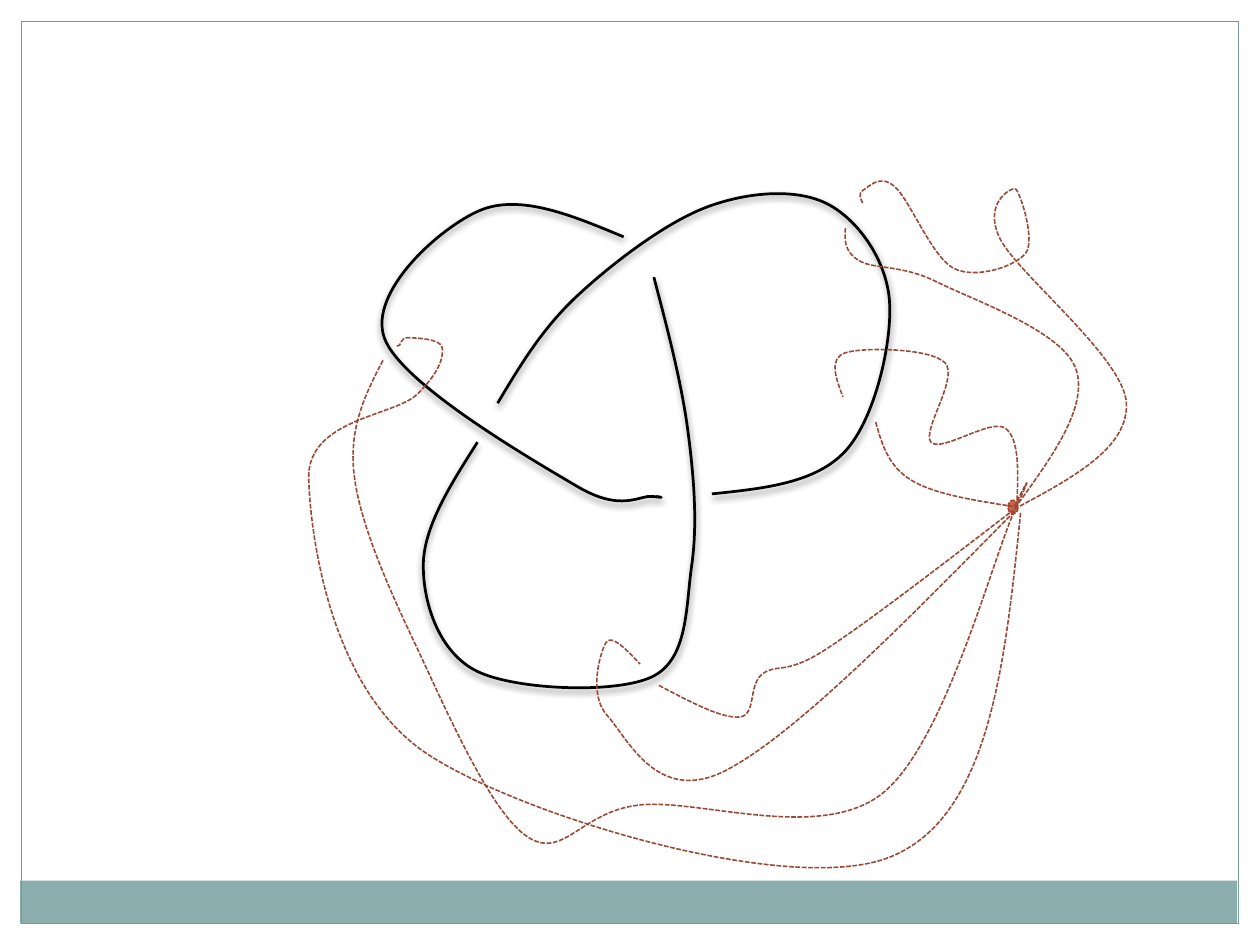
"""Builds a slide of a trefoil knot with dashed loops tied to a base point."""
from lxml import etree
from pptx import Presentation
from pptx.dml.color import RGBColor
from pptx.enum.dml import MSO_LINE
from pptx.enum.shapes import MSO_SHAPE as SHAPE
from pptx.oxml.ns import qn
from pptx.util import Inches, Pt

HUES = {"white": "FFFFFF", "band": "8CADAE", "frame": "7C999A",
        "knot": "000000", "loop": "9B4936", "dot": "D16349"}


def paint(shape, fill=None, line=None, width=0.75, dash=None):
    """Set fill and line, and drop the shadow."""
    shape.shadow.inherit = False
    if fill:
        shape.fill.solid()
        shape.fill.fore_color.rgb = RGBColor.from_string(HUES[fill])
    else:
        shape.fill.background()
    if line:
        shape.line.color.rgb = RGBColor.from_string(HUES[line])
        shape.line.width = Pt(width)
        shape.line.dash_style = dash
    else:
        shape.line.fill.background()


def curve(shapes, knots):
    """Draw one smooth open curve through the knots."""
    pts = [(Inches(x), Inches(y)) for x, y in knots]
    slopes = [tuple((b - a) / 6 for a, b in zip(p, q))
              for p, q in zip(pts, pts[2:])]
    outs = [None] + [(x + u, y + v) for (x, y), (u, v) in zip(pts[1:], slopes)]
    ins = [(x - u, y - v) for (x, y), (u, v) in zip(pts[1:], slopes)] + [None]
    outs[0] = tuple((a + b) / 2 for a, b in zip(pts[0], ins[0]))
    ins[-1] = tuple((a + b) / 2 for a, b in zip(pts[-1], outs[-1]))
    parts = list(zip(pts, outs, ins, pts[1:]))

    build = shapes.build_freeform(*pts[0])
    for part in parts:
        build.add_line_segments([(round(x), round(y)) for x, y in part[1:]], close=False)
    shape = build.convert_to_shape()

    spots = [[(1 - t) ** 3 * a + 3 * t * (1 - t) ** 2 * b
              + 3 * t * t * (1 - t) * c + t ** 3 * d
              for a, b, c, d in zip(*part)]
             for part in parts for t in [n / 40 for n in range(41)]]
    xs, ys = zip(*spots)
    left, top = round(min(xs)), round(min(ys))
    wide, high = round(max(xs)) - left, round(max(ys)) - top

    track = next(shape._element.iter(qn("a:path")))
    for pt in track.iter(qn("a:pt")):
        pt.set("x", str(int(pt.get("x")) + shape.left - left))
        pt.set("y", str(int(pt.get("y")) + shape.top - top))
    track.set("w", str(wide))
    track.set("h", str(high))
    steps = track.findall(qn("a:lnTo"))
    for n in range(0, len(steps), 3):
        bend = etree.SubElement(track, qn("a:cubicBezTo"))
        for step in steps[n:n + 3]:
            bend.append(step[0])
            track.remove(step)
    shape.left, shape.top, shape.width, shape.height = left, top, wide, high
    return shape


deck = Presentation()
deck.slide_width, deck.slide_height = Inches(10), Inches(7.5)
shapes = deck.slides.add_slide(deck.slide_layouts[6]).shapes

for box, fill, line in [
    ((0, 0, 10, 0.17), "white", None),
    ((9.83, 0, 0.17, 7.5), "white", None),
    ((0, 0, 0.17, 7.5), "white", None),
    ((0.16, 6.99, 9.66, 0.34), "band", None),
    ((0.17, 0.17, 9.66, 7.16), None, "frame"),
]:
    paint(shapes.add_shape(SHAPE.RECTANGLE, *map(Inches, box)), fill, line)

strands = []
for knots in [
    [(4.95, 1.88), (3.81, 1.67), (3.05, 2.68), (4.58, 3.86), (5.18, 3.94), (5.21, 3.94)],
    [(5.65, 3.92), (6.71, 3.58), (7.06, 2.39), (6.57, 1.62), (5.62, 1.64),
     (4.58, 2.35), (3.95, 3.2)],
    [(3.79, 3.51), (3.36, 4.49), (3.79, 5.33), (5.18, 5.37), (5.49, 4.49),
     (5.46, 3.42), (5.19, 2.2)],
]:
    strand = curve(shapes, knots)
    paint(strand, line="knot", width=1.57)
    glow = strand._element.spPr.find(qn("a:effectLst"))
    shade = etree.SubElement(glow, qn("a:outerShdw"), blurRad=str(Pt(4)),
                             dist=str(Pt(2)), dir="5400000", rotWithShape="0")
    tint = etree.SubElement(shade, qn("a:srgbClr"), val=HUES["knot"])
    etree.SubElement(tint, qn("a:alpha"), val="45000")
    strands.append(strand)
shapes.add_group_shape(strands)

base = shapes.add_shape(SHAPE.OVAL, Inches(8), Inches(3.97), Inches(0.08), Inches(0.11))
paint(base, "dot", "loop", 0.9, MSO_LINE.SQUARE_DOT)

for knots in [
    [(8.07, 4.02), (7.98, 3.4), (7.39, 3.51), (7.5, 2.88), (6.71, 2.8), (6.69, 3.15)],
    [(6.95, 3.35), (7.23, 3.81), (8.04, 4.02)],
    [(8.05, 4.04), (8.94, 3.2), (7.94, 1.9), (8.06, 1.5), (8.14, 2.01),
     (7.57, 2.13), (7.1, 1.48), (6.85, 1.51), (6.85, 1.62)],
    [(6.71, 1.81), (6.82, 2.07), (7.44, 2.24), (8.54, 2.93), (8.05, 4.04)],
    [(8.05, 4.06), (5.75, 6.12), (4.82, 5.68), (4.81, 5.1), (5.08, 5.27)],
    [(5.23, 5.44), (5.87, 5.69), (6.05, 5.35), (6.56, 5.15), (8.04, 4.05)],
    [(8.1, 4.07), (7.07, 6.8), (3.4, 5.99), (2.45, 3.8), (3.31, 3.13),
     (3.51, 2.76), (3.24, 2.68), (3.17, 2.74), (3.15, 2.74)],
    [(3.04, 2.86), (2.81, 3.76), (3.29, 5.1), (4.17, 6.63), (5.07, 6.39),
     (7, 6.3), (8.05, 4.06), (8.05, 4.02)],
]:
    paint(curve(shapes, knots), line="loop", width=0.9, dash=MSO_LINE.SQUARE_DOT)

deck.save("out.pptx")
